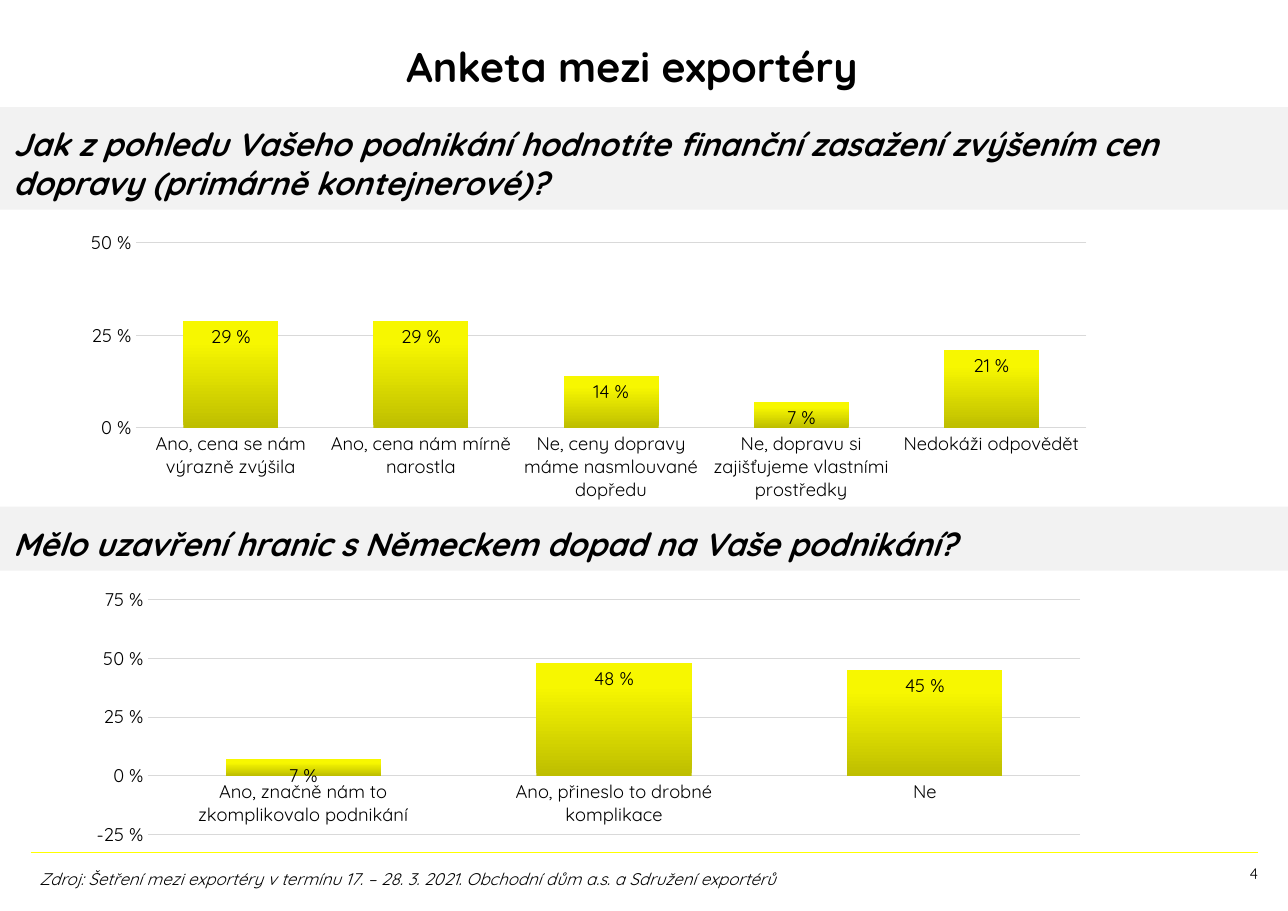
from lxml.etree import SubElement
from pptx import Presentation
from pptx.chart.data import CategoryChartData
from pptx.dml.color import RGBColor
from pptx.enum.chart import XL_CHART_TYPE, XL_LABEL_POSITION, XL_TICK_MARK
from pptx.enum.shapes import MSO_CONNECTOR, MSO_SHAPE
from pptx.enum.text import MSO_ANCHOR, PP_ALIGN
from pptx.oxml import parse_xml
from pptx.oxml.ns import nsdecls, qn
from pptx.util import Pt

FONT = "Quicksand"
PERCENT = "0\\ %"
WIDTH, HEIGHT = 841.68, 595.44
COLORS = {
    "text": "000000",
    "band": "F2F2F2",
    "grid": "D9D9D9",
    "rule": "FFFF00",
    "bar_bottom": "BEBE00",
    "bar_upper": "F7F700",
    "bar_top": "F8F800",
}
BAR_STOPS = [(0, "bar_bottom"), (80, "bar_upper"), (100, "bar_top")]


def color(name):
    return RGBColor.from_string(COLORS[name])


def format_font(font, size, bold=False, italic=False):
    font.name = FONT
    font.size = Pt(size)
    font.bold = bold
    font.italic = italic
    font.color.rgb = color("text")


def write_text(shape, text, size, align=PP_ALIGN.LEFT, anchor=MSO_ANCHOR.TOP,
               margins=(0, 0, 0, 0), bold=False, italic=False):
    frame = shape.text_frame
    frame.word_wrap = True
    frame.vertical_anchor = anchor
    frame.margin_left, frame.margin_top, frame.margin_right, frame.margin_bottom = map(Pt, margins)
    paragraph = frame.paragraphs[0]
    paragraph.alignment = align
    run = paragraph.add_run()
    run.text = text
    format_font(run.font, size, bold, italic)


def add_label(slide, text, box, size, **text_format):
    write_text(slide.shapes.add_textbox(*map(Pt, box)), text, size, **text_format)


def add_question(slide, text, top, height):
    band = slide.shapes.add_shape(MSO_SHAPE.RECTANGLE, Pt(0), Pt(top), Pt(WIDTH), Pt(height))
    band.shadow.inherit = False
    band.fill.solid()
    band.fill.fore_color.rgb = color("band")
    band.line.fill.background()
    write_text(band, text, 21, margins=(8.64, 11.52, 8.64, 0), bold=True, italic=True)


def add_rule(slide, left, right, y):
    rule = slide.shapes.add_connector(MSO_CONNECTOR.STRAIGHT, Pt(left), Pt(y), Pt(right), Pt(y))
    rule.line.color.rgb = color("rule")
    rule.line.width = Pt(1)
    SubElement(rule._element.spPr, qn("a:effectLst"))


def fill_with_gradient(series):
    stops = "".join(
        f'<a:gs pos="{position * 1000}"><a:srgbClr val="{COLORS[name]}"/></a:gs>'
        for position, name in BAR_STOPS
    )
    gradient = parse_xml(
        f'<a:gradFill {nsdecls("a")} rotWithShape="1"><a:gsLst>{stops}</a:gsLst>'
        '<a:lin ang="16200000" scaled="0"/></a:gradFill>'
    )
    series._element.get_or_add_spPr().insert(0, gradient)


def format_line(line):
    line.color.rgb = color("grid")
    line.width = Pt(0.75)


def add_answers(slide, answers, box, minimum, maximum):
    data = CategoryChartData(number_format=PERCENT)
    data.categories = list(answers)
    data.add_series("Series 1", answers.values())
    chart = slide.shapes.add_chart(XL_CHART_TYPE.COLUMN_CLUSTERED, *map(Pt, box), data).chart
    chart.has_legend = False
    chart.has_title = False
    format_font(chart.font, 10)

    for axis in (chart.category_axis, chart.value_axis):
        axis.major_tick_mark = XL_TICK_MARK.NONE
        axis.minor_tick_mark = XL_TICK_MARK.NONE
        format_font(axis.tick_labels.font, 12)
    format_line(chart.category_axis.format.line)

    values = chart.value_axis
    values.minimum_scale = minimum
    values.maximum_scale = maximum
    values.major_unit = 0.25
    values.tick_labels.number_format = PERCENT
    values.tick_labels.number_format_is_linked = False
    values.format.line.fill.background()
    values.has_major_gridlines = True
    format_line(values.major_gridlines.format.line)

    plot = chart.plots[0]
    plot.vary_by_categories = False
    plot.gap_width = 100
    plot.overlap = -24
    plot.has_data_labels = True
    labels = plot.data_labels
    labels.show_value = True
    labels.position = XL_LABEL_POSITION.INSIDE_END
    labels.number_format = PERCENT
    labels.number_format_is_linked = False
    format_font(labels.font, 12)
    fill_with_gradient(plot.series[0])


def main():
    presentation = Presentation()
    presentation.slide_width = Pt(WIDTH)
    presentation.slide_height = Pt(HEIGHT)
    slide = presentation.slides.add_slide(presentation.slide_layouts[6])

    add_rule(slide, 20, 822, 557.3)
    add_label(slide, "Anketa mezi exportéry", (46, 13, 734, 60), 27,
              align=PP_ALIGN.CENTER, anchor=MSO_ANCHOR.MIDDLE, bold=True)
    add_label(slide, "4", (487, 565.2, 335.2, 30), 10, align=PP_ALIGN.RIGHT)

    add_question(slide, "Jak z pohledu Vašeho podnikání hodnotíte finanční zasažení "
                 "zvýšením cen dopravy (primárně kontejnerové)?", 70, 67)
    add_answers(slide, {
        "Ano, cena se nám výrazně zvýšila": 0.29,
        "Ano, cena nám mírně narostla": 0.29,
        "Ne, ceny dopravy máme nasmlouvané dopředu": 0.14,
        "Ne, dopravu si zajišťujeme vlastními prostředky": 0.07,
        "Nedokáži odpovědět": 0.21,
    }, (46, 147.6, 677.5, 183.6), 0, 0.5)

    add_question(slide, "Mělo uzavření hranic s Německem dopad na Vaše podnikání?", 331.2, 41.8)
    add_answers(slide, {
        "Ano, značně nám to zkomplikovalo podnikání": 0.07,
        "Ano, přineslo to drobné komplikace": 0.48,
        "Ne": 0.45,
    }, (49.7, 380.9, 669.6, 175.7), -0.25, 0.75)

    add_label(slide, "Zdroj: Šetření mezi exportéry v termínu 17. – 28. 3. 2021. "
              "Obchodní dům a.s. a Sdružení exportérů", (18.7, 564.5, 715.7, 21), 11,
              margins=(7.2, 3.6, 7.2, 3.6), italic=True)

    presentation.save("out.pptx")


if __name__ == "__main__":
    main()
